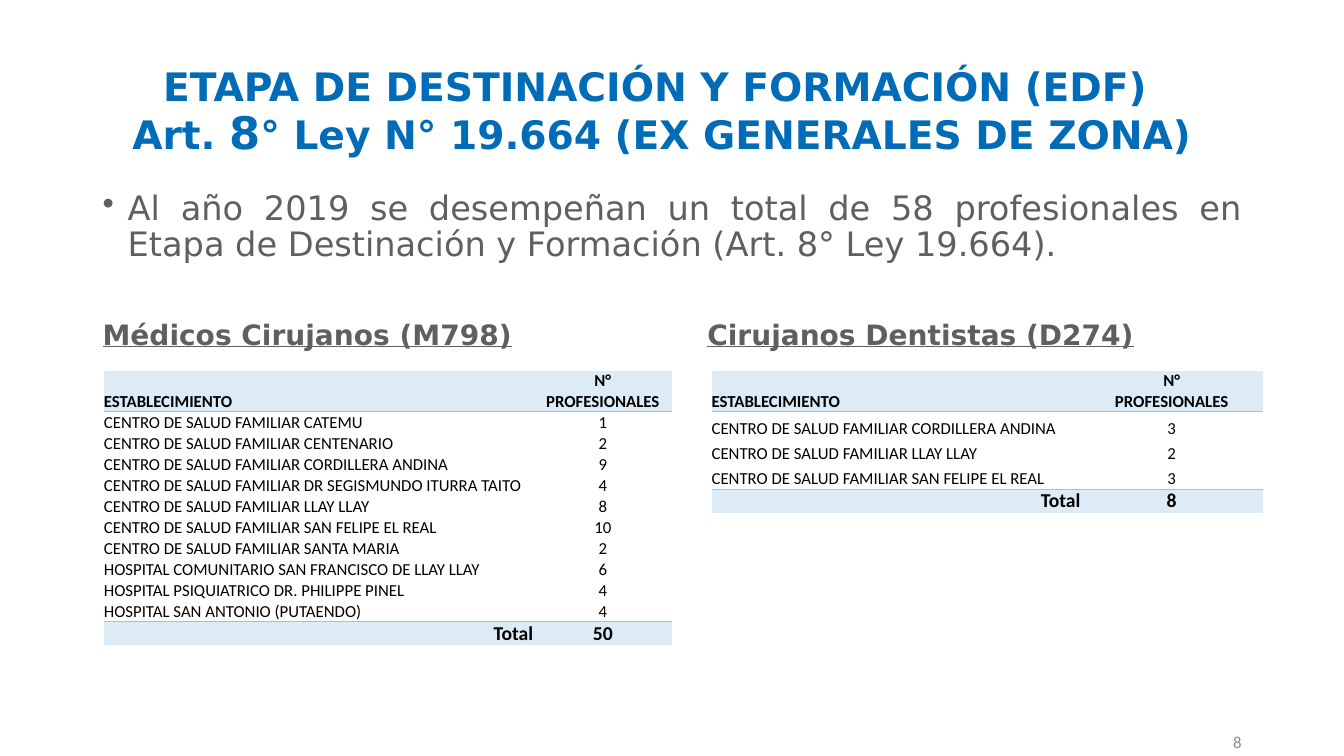
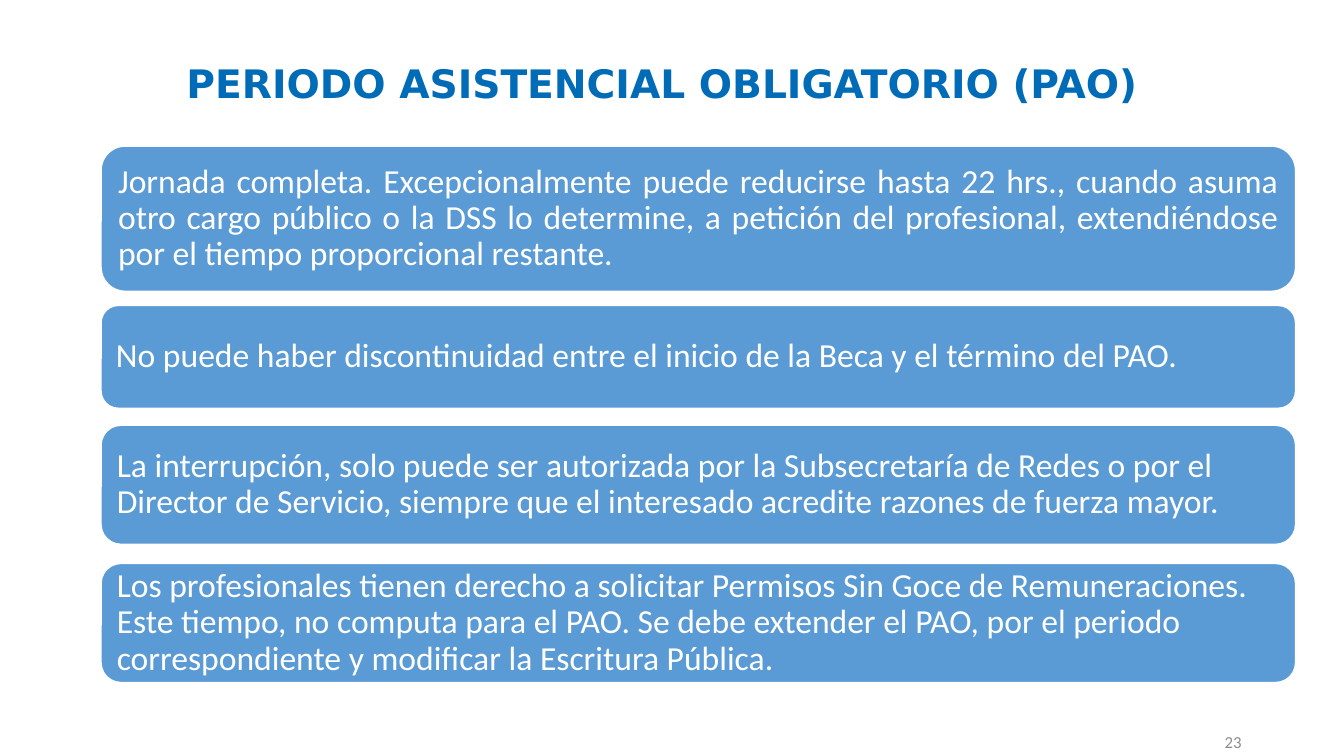
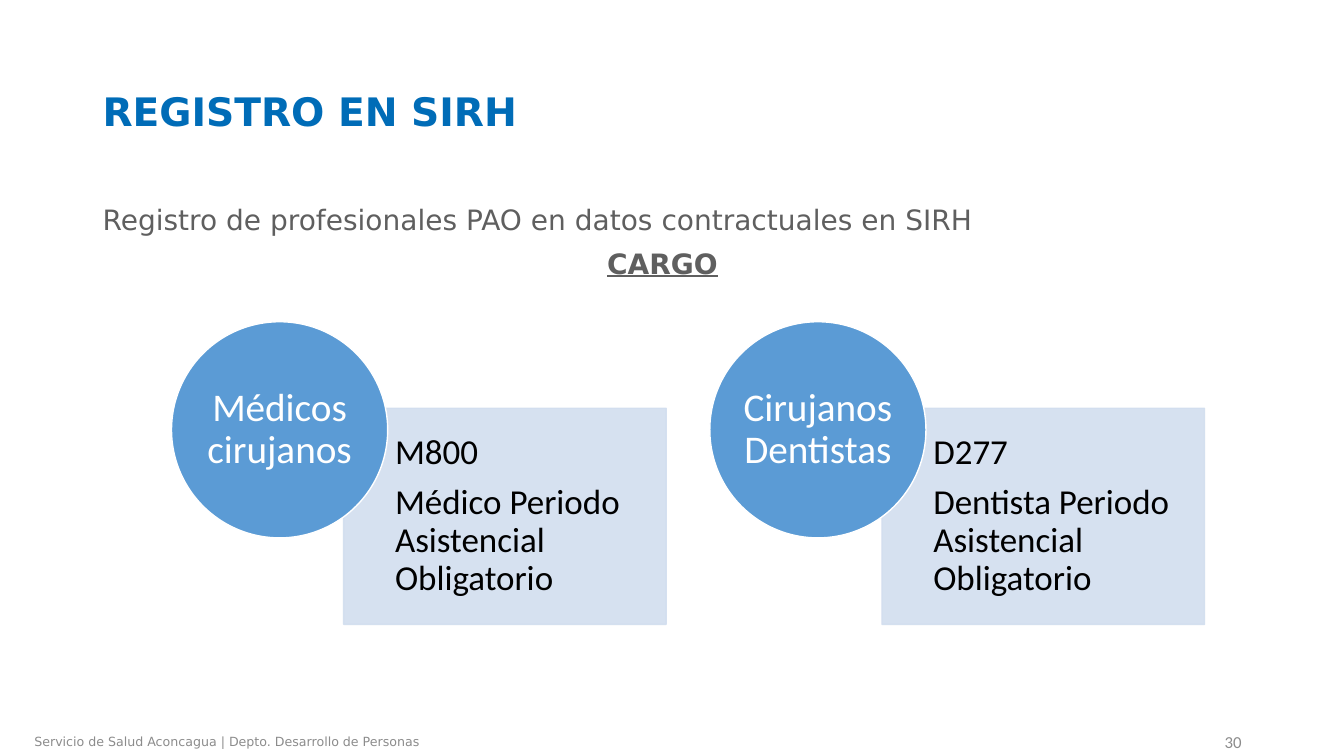
from lxml.etree import SubElement
from pptx import Presentation
from pptx.dml.color import RGBColor
from pptx.enum.shapes import MSO_SHAPE as Preset
from pptx.enum.text import MSO_ANCHOR as Anchor, PP_ALIGN as Align
from pptx.oxml import parse_xml
from pptx.oxml.ns import nsdecls, qn
from pptx.util import Pt

COLORS = {
    "title": "006CB7",
    "body": "5F5F5F",
    "footer": "8C8C8C",
    "black": "000000",
    "white": "FFFFFF",
    "accent": "5B9BD5",
    "panel": "D2DEEF",
    "band": "DDEBF7",
    "rule": "9BC2E6",
}

STYLES = {
    "title": {"color": "title", "name": "DejaVu Sans", "size": Pt(28), "bold": True},
    "lead": {"color": "body", "name": "DejaVu Sans", "size": Pt(24)},
    "body": {"color": "body", "name": "DejaVu Sans", "size": Pt(20)},
    "page": {"color": "footer", "name": "Calibri", "size": Pt(12)},
    "footer": {"color": "footer", "name": "DejaVu Sans", "size": Pt(9)},
    "card": {"color": "white", "name": "Calibri", "size": Pt(24)},
    "circle": {"color": "white", "name": "Calibri", "size": Pt(28)},
    "panel": {"color": "black", "name": "Calibri", "size": Pt(25)},
    "cell": {"color": "black", "name": "Calibri", "size": Pt(12), "bold": False},
    "header": {"color": "black", "name": "Calibri", "size": Pt(12), "bold": True},
    "total": {"color": "black", "name": "Calibri", "size": Pt(14), "bold": True},
}

HEADING = {"bold": True, "underline": True}
TIGHT = {"line_spacing": 0.9}
CENTERED = {**TIGHT, "alignment": Align.CENTER}
JUSTIFIED = {**TIGHT, "alignment": Align.JUSTIFY}

DOCTORS = [
    ("CENTRO DE SALUD FAMILIAR CATEMU", 1),
    ("CENTRO DE SALUD FAMILIAR CENTENARIO", 2),
    ("CENTRO DE SALUD FAMILIAR CORDILLERA ANDINA", 9),
    ("CENTRO DE SALUD FAMILIAR DR SEGISMUNDO ITURRA TAITO", 4),
    ("CENTRO DE SALUD FAMILIAR LLAY LLAY", 8),
    ("CENTRO DE SALUD FAMILIAR SAN FELIPE EL REAL", 10),
    ("CENTRO DE SALUD FAMILIAR SANTA MARIA", 2),
    ("HOSPITAL COMUNITARIO SAN FRANCISCO DE LLAY LLAY", 6),
    ("HOSPITAL PSIQUIATRICO DR. PHILIPPE PINEL", 4),
    ("HOSPITAL SAN ANTONIO (PUTAENDO)", 4),
]

DENTISTS = [
    ("CENTRO DE SALUD FAMILIAR CORDILLERA ANDINA", 3),
    ("CENTRO DE SALUD FAMILIAR LLAY LLAY", 2),
    ("CENTRO DE SALUD FAMILIAR SAN FELIPE EL REAL", 3),
]

PAO_RULES = [
    (104.4, 103.7, JUSTIFIED,
     "Jornada completa. Excepcionalmente puede reducirse hasta 22 hrs., cuando asuma otro cargo "
     "público o la DSS lo determine, a petición del profesional, extendiéndose por el tiempo "
     "proporcional restante."),
    (218.2, 73.4, TIGHT,
     "No puede haber discontinuidad entre el inicio de la Beca y el término del PAO."),
    (303.8, 85, TIGHT,
     "La interrupción, solo puede ser autorizada por la Subsecretaría de Redes o por el Director "
     "de Servicio, siempre que el interesado acredite razones de fuerza mayor."),
    (402.5, 85, TIGHT,
     "Los profesionales tienen derecho a solicitar Permisos Sin Goce de Remuneraciones. Este "
     "tiempo, no computa para el PAO. Se debe extender el PAO, por el periodo correspondiente y "
     "modificar la Escritura Pública."),
]


def apply(target, values):
    for attribute, value in values.items():
        setattr(target, attribute, value)


def rgb(color):
    return RGBColor.from_string(COLORS[color])


def write_run(paragraph, text, style, changes):
    if text == "\n":
        paragraph.add_line_break()
        return
    run = paragraph.add_run()
    run.text = text
    values = {**STYLES[style], **changes}
    run.font.color.rgb = rgb(values.pop("color"))
    apply(run.font, values)


def write(paragraph, content, style, layout):
    apply(paragraph, layout)
    runs = [(content, {})] if isinstance(content, str) else content
    for text, changes in runs:
        write_run(paragraph, text, style, changes)
    return paragraph


def set_insets(frame, left, top, right, bottom):
    apply(frame, {"margin_left": Pt(left), "margin_top": Pt(top),
                  "margin_right": Pt(right), "margin_bottom": Pt(bottom)})


def add_text(slide, box, content, style, layout, anchor=Anchor.TOP):
    frame = slide.shapes.add_textbox(*map(Pt, box)).text_frame
    apply(frame, {"word_wrap": True, "vertical_anchor": anchor})
    write(frame.paragraphs[0], content, style, layout)
    return frame


def add_figure(slide, preset, box, fill, line, insets):
    figure = slide.shapes.add_shape(preset, *map(Pt, box))
    figure.shadow.inherit = False
    figure.fill.solid()
    figure.fill.fore_color.rgb = rgb(fill)
    figure.line.color.rgb = rgb(line)
    figure.line.width = Pt(1)
    apply(figure.text_frame, {"word_wrap": True, "vertical_anchor": Anchor.MIDDLE})
    set_insets(figure.text_frame, *insets)
    return figure


def set_opacity(figure, percent):
    for color in figure._element.spPr.iter(qn("a:srgbClr")):
        SubElement(color, qn("a:alpha")).set("val", str(percent * 1000))


def add_bullet(paragraph, indent):
    properties = paragraph._p.get_or_add_pPr()
    properties.set("marL", str(Pt(indent)))
    properties.set("indent", str(-Pt(indent)))
    SubElement(properties, qn("a:buChar")).set("char", "•")


def add_tab_stop(paragraph, position):
    stops = SubElement(paragraph._p.get_or_add_pPr(), qn("a:tabLst"))
    stop = SubElement(stops, qn("a:tab"))
    stop.set("pos", str(Pt(position)))
    stop.set("algn", "l")


def set_borders(cell, ruled):
    properties = cell._tc.get_or_add_tcPr()
    for position, edge in enumerate(("lnL", "lnR", "lnT", "lnB")):
        paint = "<a:noFill/>"
        if edge in ruled:
            paint = f'<a:solidFill><a:srgbClr val="{COLORS["rule"]}"/></a:solidFill>'
        border = parse_xml(f'<a:{edge} {nsdecls("a")} w="{Pt(0.5)}">{paint}</a:{edge}>')
        properties.insert(position, border)


def fill_cell(cell, lines, style, align, banded, ruled):
    cell.vertical_anchor = Anchor.BOTTOM
    set_insets(cell, 0, 0, 0, 0)
    if banded:
        cell.fill.solid()
        cell.fill.fore_color.rgb = rgb("band")
    else:
        cell.fill.background()
    set_borders(cell, ruled)
    frame = cell.text_frame
    for index, line in enumerate(lines):
        paragraph = frame.add_paragraph() if index else frame.paragraphs[0]
        write(paragraph, line, style, {"alignment": align})


def add_staff_table(slide, left, widths, heights, staff):
    total = sum(count for _, count in staff)
    rows = [("ESTABLECIMIENTO", "N°\nPROFESIONALES"), *staff, ("Total", total)]
    last = len(rows) - 1
    table = slide.shapes.add_table(len(rows), 2, Pt(left), Pt(265), Pt(sum(widths)),
                                   Pt(sum(heights))).table
    apply(table, {"first_row": False, "horz_banding": False})
    for column, width in zip(table.columns, widths):
        column.width = Pt(width)
    for index, (values, height) in enumerate(zip(rows, heights)):
        table.rows[index].height = Pt(height)
        style = {0: "header", last: "total"}.get(index, "cell")
        ruled = {edge for edge, places in (("lnT", (1, last)), ("lnB", (0, last - 1)))
                 if index in places}
        name_align = Align.RIGHT if style == "total" else Align.LEFT
        for column, (value, align) in enumerate(zip(values, (name_align, Align.CENTER))):
            fill_cell(table.cell(index, column), str(value).split("\n"), style, align,
                      style != "cell", ruled)


def add_titled_slide(deck, title, page, box, layout=CENTERED):
    slide = deck.slides.add_slide(deck.slide_layouts[6])
    add_text(slide, box, title, "title", layout, Anchor.MIDDLE)
    add_text(slide, (678, 519, 216, 21), str(page), "page",
             {"alignment": Align.RIGHT}, Anchor.MIDDLE)
    return slide


def add_post(slide, left, profession, code, post):
    panel = add_figure(slide, Preset.RECTANGLE, (left + 123, 291.6, 230.4, 154.4),
                       "panel", "panel", (36.7, 13.7, 13.7, 13.7))
    set_opacity(panel, 90)
    frame = panel.text_frame
    left_aligned = {**TIGHT, "alignment": Align.LEFT}
    write(frame.paragraphs[0], code, "panel", left_aligned)
    write(frame.add_paragraph(), post, "panel", {**left_aligned, "space_before": Pt(8.75)})
    circle = add_figure(slide, Preset.OVAL, (left, 229.8, 154.4, 154.4),
                        "accent", "white", (0, 0, 0, 0))
    write(circle.text_frame.paragraphs[0], profession, "circle", CENTERED)


def build_training_stage(deck):
    title = [("ETAPA DE DESTINACIÓN Y FORMACIÓN (EDF) ", {}), ("\n", {}), ("Art. ", {}),
             ("8", {"size": Pt(32)}), ("° Ley N° 19.664 (EX GENERALES DE ZONA)", {})]
    slide = add_titled_slide(deck, title, 8, (51.8, 28.8, 841.7, 104.4))
    frame = add_text(
        slide, (66.2, 133.2, 828, 357.8),
        "Al año 2019 se desempeñan un total de 58 profesionales en Etapa de Destinación y "
        "Formación (Art. 8° Ley 19.664).", "lead", JUSTIFIED)
    add_bullet(frame.paragraphs[0], 18)
    headings = [("Médicos Cirujanos (M798)", HEADING), ("\t", {}),
                ("Cirujanos Dentistas (D274)", HEADING)]
    heading = write(frame.add_paragraph(), headings, "body",
                    {**TIGHT, "alignment": Align.LEFT, "space_before": Pt(41)})
    add_tab_stop(heading, 432)
    add_staff_table(slide, 74.2, (306.7, 99.4), (29, *[15] * len(DOCTORS), 17), DOCTORS)
    add_staff_table(slide, 508.3, (263.5, 130.3), (29, 19.5, 18, 18, 17), DENTISTS)


def build_mandatory_period(deck):
    slide = add_titled_slide(deck, "PERIODO ASISTENCIAL OBLIGATORIO (PAO)", 23,
                             (51.8, 9.4, 841.7, 104.4))
    for top, height, layout, rule in PAO_RULES:
        card = add_figure(slide, Preset.ROUNDED_RECTANGLE, (72.2, top, 853.2, height),
                          "accent", "white", (7.2, 7.2, 7.2, 7.2))
        write(card.text_frame.paragraphs[0], rule, "card", {"alignment": Align.LEFT, **layout})


def build_registry(deck):
    slide = add_titled_slide(deck, "REGISTRO EN SIRH", 30, (66.2, 28.8, 828, 104.4), TIGHT)
    frame = add_text(slide, (66.2, 144, 828, 342.7),
                     "Registro de profesionales PAO en datos contractuales en SIRH", "body", TIGHT)
    frame.margin_right = Pt(21)
    write(frame.add_paragraph(), [("CARGO", HEADING)], "body",
          {**CENTERED, "space_before": Pt(10)})
    add_text(slide, (0, 519, 324, 21),
             "Servicio de Salud Aconcagua | Depto. Desarrollo de Personas", "footer",
             {"alignment": Align.CENTER}, Anchor.MIDDLE)
    add_post(slide, 122.5, "Médicos cirujanos", "M800", "Médico Periodo Asistencial Obligatorio")
    add_post(slide, 507, "Cirujanos Dentistas", "D277", "Dentista Periodo Asistencial Obligatorio")


def main():
    deck = Presentation()
    apply(deck, {"slide_width": Pt(960), "slide_height": Pt(540)})
    build_training_stage(deck)
    build_mandatory_period(deck)
    build_registry(deck)
    deck.save("out.pptx")


if __name__ == "__main__":
    main()
